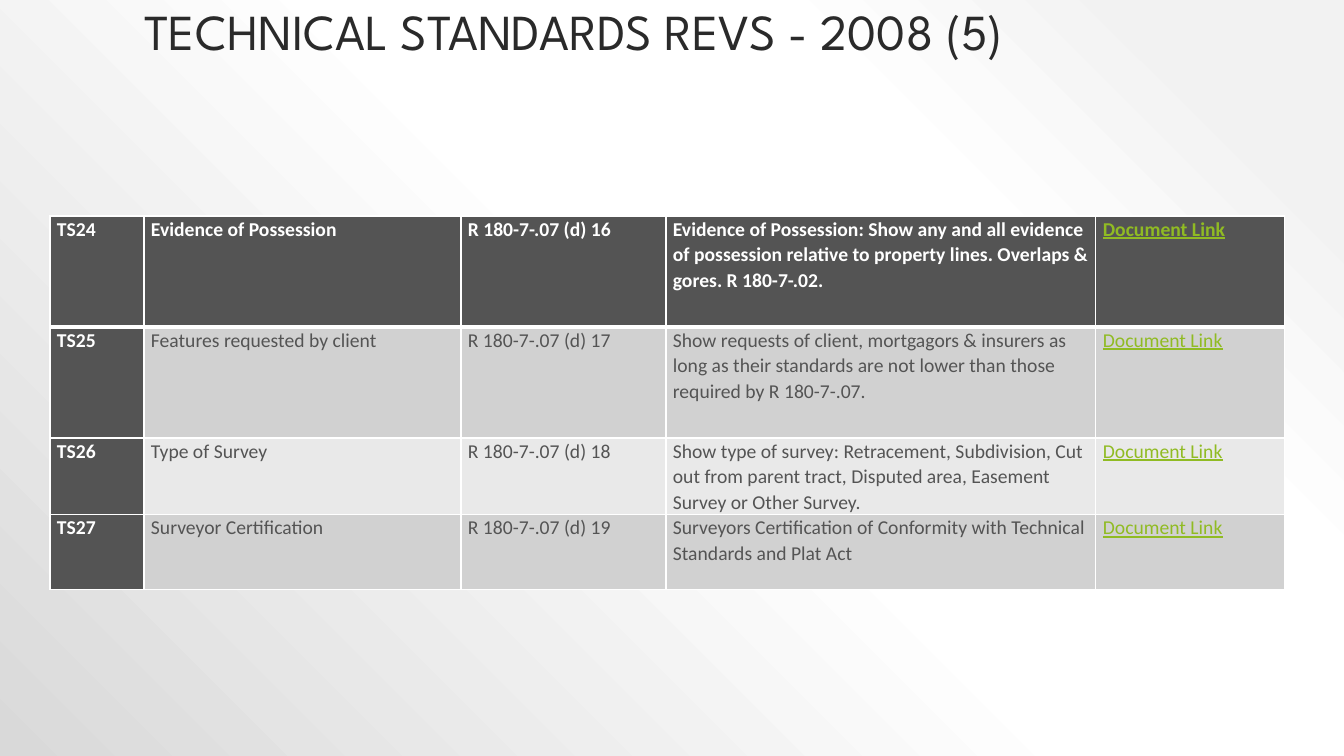
"""Build the technical standards revisions slide."""
from pptx import Presentation
from pptx.dml.color import RGBColor
from pptx.enum.text import MSO_ANCHOR, PP_ALIGN
from pptx.oxml import parse_xml
from pptx.util import Pt

EMU_PER_INCH = 914400
PX_PER_INCH = 100.8
BOTTOM = MSO_ANCHOR.BOTTOM
TOP = MSO_ANCHOR.TOP
LEFT = PP_ALIGN.LEFT

WHITE = RGBColor(0xFF, 0xFF, 0xFF)
TITLE_INK = RGBColor(0x2A, 0x2A, 0x2A)
DARK = RGBColor(0x54, 0x54, 0x54)
BAND_ODD = RGBColor(0xD1, 0xD1, 0xD1)
BAND_EVEN = RGBColor(0xE9, 0xE9, 0xE9)
LINK_GREEN = RGBColor(0x90, 0xBB, 0x23)
PALE = RGBColor(0xF2, 0xF2, 0xF2)
SHADE = RGBColor(0xD9, 0xD9, 0xD9)

TITLE_FONT = "League Spartan"
BODY_FONT = "Calibri"
DRAWING_NS = 'xmlns:a="http://schemas.openxmlformats.org/drawingml/2006/main"'

BACKGROUND_STOPS = [(10, PALE), (28, WHITE), (48, WHITE), (100, SHADE)]
COLUMN_WIDTHS = [94, 317, 205, 430, 189]
ROW_HEIGHTS = [111, 111, 75, 75]
LINK_TEXT = "Document Link"
STANDARDS = [
    ("TS24", "Evidence of Possession", "R 180-7-.07 (d) 16",
     "Evidence of Possession: Show any and all evidence of possession relative "
     "to property lines. Overlaps & gores. R 180-7-.02."),
    ("TS25", "Features requested by client", "R 180-7-.07 (d) 17",
     "Show requests of client, mortgagors & insurers as long as their standards "
     "are not lower than those required by R 180-7-.07."),
    ("TS26", "Type of Survey", "R 180-7-.07 (d) 18",
     "Show type of survey: Retracement, Subdivision, Cut out from parent tract, "
     "Disputed area, Easement Survey or Other Survey."),
    ("TS27", "Surveyor Certification", "R 180-7-.07 (d) 19",
     "Surveyors Certification of Conformity with Technical Standards and Plat Act"),
]


def px(length):
    return round(length * EMU_PER_INCH / PX_PER_INCH)


def add_run(paragraph, text, font_name, size, color, bold=False, underline=False):
    run = paragraph.add_run()
    run.text = text
    font = run.font
    font.name = font_name
    font.size = Pt(size)
    font.bold = bold
    font.underline = underline
    font.color.rgb = color


def set_background(slide):
    fill = slide.background.fill
    fill.gradient()
    gradient = slide.element.find(".//{*}gradFill")
    stops = "".join(
        f'<a:gs pos="{position * 1000}"><a:srgbClr val="{color}"/></a:gs>'
        for position, color in BACKGROUND_STOPS)
    radial = parse_xml(
        f'<a:gradFill {DRAWING_NS} rotWithShape="1"><a:gsLst>{stops}</a:gsLst>'
        '<a:path path="circle"><a:fillToRect l="100000" b="100000"/></a:path>'
        '</a:gradFill>')
    gradient.getparent().replace(gradient, radial)


def set_title(slide, text):
    title = slide.shapes.title
    title.left, title.top, title.width, title.height = px(134), 0, px(1076), px(67)
    frame = title.text_frame
    frame.word_wrap = True
    frame.vertical_anchor = BOTTOM
    paragraph = frame.paragraphs[0]
    paragraph.alignment = LEFT
    paragraph.line_spacing = 0.9
    add_run(paragraph, text, TITLE_FONT, 36, TITLE_INK)


def set_borders(cell, top, bottom):
    properties = cell._tc.get_or_add_tcPr()
    for side, width in (("L", 1), ("R", 1), ("T", top), ("B", bottom)):
        properties.append(parse_xml(
            f'<a:ln{side} {DRAWING_NS} w="{Pt(width)}"><a:solidFill>'
            f'<a:srgbClr val="{WHITE}"/></a:solidFill></a:ln{side}>'))


def fill_cell(cell, text, row, column):
    is_header = row == 0
    is_dark = is_header or column == 0
    is_link = text == LINK_TEXT
    set_borders(cell, top=3 if row == 1 else 1, bottom=3 if is_header else 1)
    cell.fill.solid()
    band = BAND_ODD if row % 2 else BAND_EVEN
    cell.fill.fore_color.rgb = DARK if is_dark else band
    cell.margin_left = cell.margin_right = px(7)
    cell.margin_top = cell.margin_bottom = 0
    cell.vertical_anchor = TOP
    paragraph = cell.text_frame.paragraphs[0]
    paragraph.line_spacing = 1.07
    ink = WHITE if is_dark else DARK
    add_run(paragraph, text, BODY_FONT, 14, LINK_GREEN if is_link else ink,
            bold=is_dark, underline=is_link)


def add_standards_table(slide):
    table = slide.shapes.add_table(
        len(ROW_HEIGHTS), len(COLUMN_WIDTHS), px(50), px(216),
        px(sum(COLUMN_WIDTHS)), px(sum(ROW_HEIGHTS))).table
    table.first_col = True
    for column, width in zip(table.columns, COLUMN_WIDTHS):
        column.width = px(width)
    for row, height in zip(table.rows, ROW_HEIGHTS):
        row.height = px(height)
    for row, standard in enumerate(STANDARDS):
        for column, text in enumerate((*standard, LINK_TEXT)):
            fill_cell(table.cell(row, column), text, row, column)


def main():
    presentation = Presentation()
    presentation.slide_width = px(1344)
    presentation.slide_height = px(756)
    slide = presentation.slides.add_slide(presentation.slide_layouts[5])
    set_background(slide)
    set_title(slide, "TECHNICAL STANDARDS REVS - 2008 (5)")
    add_standards_table(slide)
    presentation.save("out.pptx")


if __name__ == "__main__":
    main()
